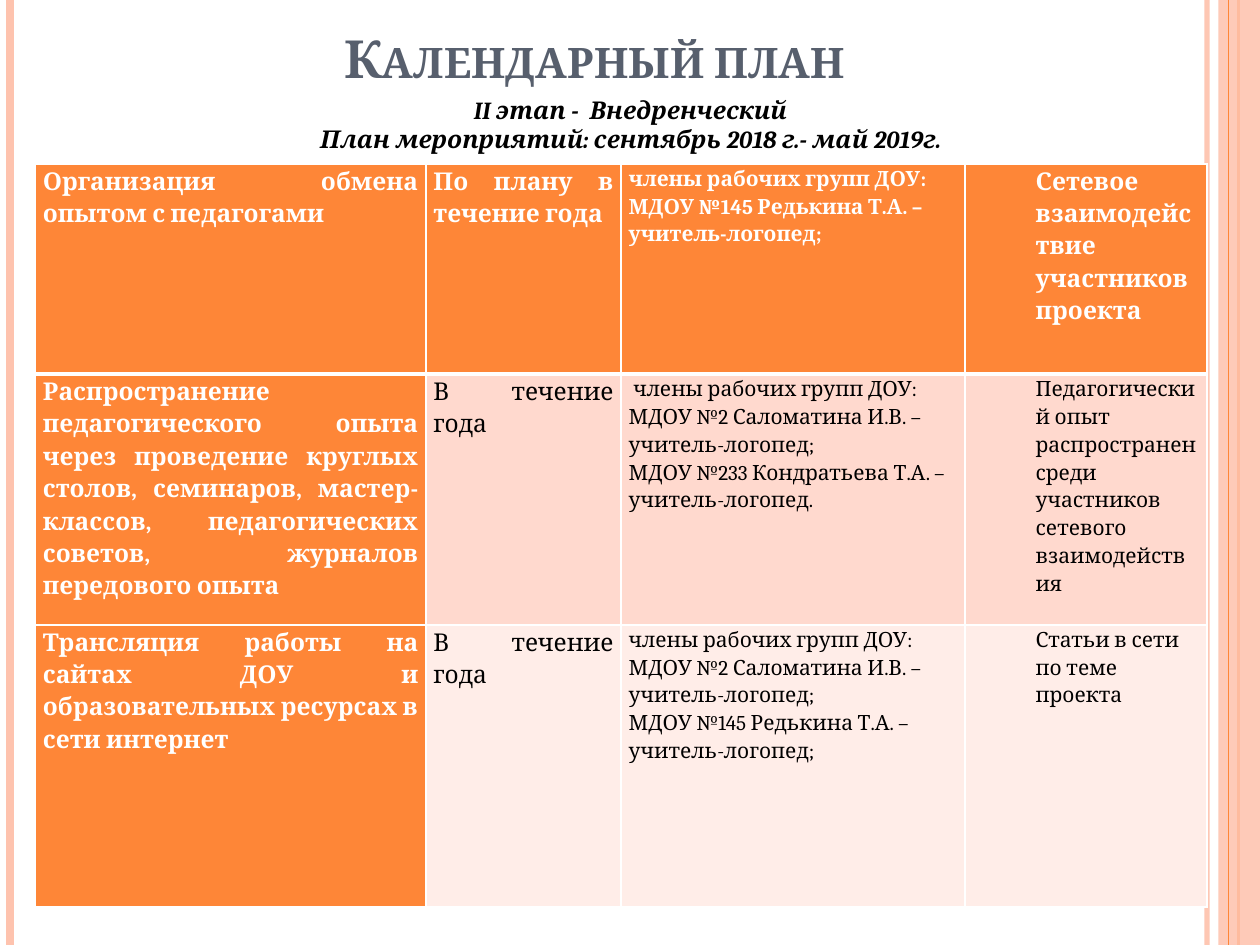
"""Build the calendar plan slide: striped margins, headings and a table of activities."""
from dataclasses import dataclass
from typing import Any, Optional

from lxml.etree import SubElement
from pptx import Presentation
from pptx.dml.color import RGBColor
from pptx.enum.shapes import MSO_CONNECTOR, MSO_SHAPE
from pptx.enum.text import MSO_ANCHOR, PP_ALIGN
from pptx.oxml.ns import qn
from pptx.util import Inches, Pt

ORANGE = RGBColor(0xFE, 0x86, 0x37)
PEACH = RGBColor(0xFE, 0xC3, 0xAE)
BAND_DARK = RGBColor(0xFF, 0xD9, 0xCE)
BAND_LIGHT = RGBColor(0xFF, 0xED, 0xE8)
SLATE = RGBColor(0x57, 0x5F, 0x6D)
WHITE = RGBColor(0xFF, 0xFF, 0xFF)
BLACK = RGBColor(0x00, 0x00, 0x00)

FONT = "Cambria"
SLIDE_WIDTH, SLIDE_HEIGHT = 10, 7.5
COLUMN_WIDTHS = (3.1, 1.55, 2.73, 1.92)
ROW_HEIGHTS = (1.67, 1.99, 2.24)
CELL_FORMAT = {
    "margin_left": Inches(0.06),
    "margin_right": Inches(0.06),
    "margin_top": 0,
    "margin_bottom": 0,
}


@dataclass(frozen=True)
class Stripe:
    x: float
    color: RGBColor
    width: float
    opacity: int = 100


@dataclass(frozen=True)
class Heading:
    left: float
    top: float
    width: float
    height: float
    lines: tuple[str, ...]
    size: float
    color: RGBColor
    italic: bool = False
    wrap: bool = True
    small_caps: bool = False


@dataclass(frozen=True)
class Entry:
    lines: tuple[str, ...]
    size: float = 12
    align: Optional[PP_ALIGN] = None
    indent: float = 0
    space_after: float = 0


@dataclass(frozen=True)
class Activity:
    fill: RGBColor
    entries: tuple[Entry, ...]
    header: bool = False


STRIPES_BEHIND = (
    Stripe(9.58, PEACH, 3, 93),
    Stripe(0.08, PEACH, 4.5),
    Stripe(9.83, ORANGE, 1.5),
)
STRIPE_IN_FRONT = Stripe(9.75, ORANGE, 0.75)

HEADINGS = (
    Heading(0.67, 0.07, 8.17, 0.77, ("Календарный план ",), 30, SLATE, small_caps=True),
    Heading(
        2.32, 0.7, 5.37, 0.57,
        ("II этап -  Внедренческий", "План мероприятий: сентябрь 2018 г.- май 2019г."),
        14, BLACK, italic=True, wrap=False,
    ),
)

MEMBERS = "члены рабочих групп ДОУ:"
SPEECH_2 = "МДОУ №2 Саломатина И.В. – учитель-логопед;"
SPEECH_145 = "МДОУ №145 Редькина Т.А. – учитель-логопед;"
SPEECH_233 = "МДОУ №233 Кондратьева Т.А. – учитель-логопед."


def justified(text: str, space_after: float = 10, indent: float = 0) -> Entry:
    """Return a 14 pt justified entry."""
    return Entry((text,), 14, PP_ALIGN.JUSTIFY, indent, space_after)


ACTIVITIES = (
    Activity(ORANGE, (
        justified("Организация обмена опытом с педагогами"),
        justified("По плану в течение года", 0),
        Entry((MEMBERS, SPEECH_145)),
        justified("Сетевое взаимодействие участников проекта", 0, 0.5),
    ), header=True),
    Activity(BAND_DARK, (
        justified(
            "Распространение педагогического опыта через проведение круглых столов, "
            "семинаров, мастер-классов, педагогических советов, журналов передового опыта", 0
        ),
        justified("В течение года"),
        Entry((" " + MEMBERS, SPEECH_2, SPEECH_233)),
        Entry(("Педагогический опыт распространен среди участников сетевого "
               "взаимодействия",), indent=0.5),
    )),
    Activity(BAND_LIGHT, (
        justified("Трансляция работы на сайтах ДОУ и образовательных ресурсах в сети интернет"),
        justified("В течение года"),
        Entry((MEMBERS, SPEECH_2, SPEECH_145)),
        Entry(("Статьи в сети по теме проекта",), indent=0.5),
    )),
)


def apply_format(target: Any, values: dict[str, Any]) -> None:
    """Set each named attribute on the target."""
    for name, value in values.items():
        setattr(target, name, value)


def set_opacity(properties: Any, percent: int) -> None:
    """Give the first solid colour in the properties an opacity."""
    color = next(properties.iter(qn("a:srgbClr")))
    SubElement(color, qn("a:alpha")).set("val", str(percent * 1000))


def draw_stripe(slide: Any, stripe: Stripe) -> None:
    """Draw a vertical line over the full slide height."""
    x = Inches(stripe.x)
    line = slide.shapes.add_connector(MSO_CONNECTOR.STRAIGHT, x, 0, x, Inches(SLIDE_HEIGHT))
    line.line.color.rgb = stripe.color
    line.line.width = Pt(stripe.width)
    properties = line._element.spPr
    SubElement(properties, qn("a:effectLst"))
    if stripe.opacity < 100:
        set_opacity(properties, stripe.opacity)


def draw_side_band(slide: Any) -> None:
    """Draw the translucent band along the right edge."""
    band = slide.shapes.add_shape(
        MSO_SHAPE.RECTANGLE, Inches(9.67), 0, Inches(0.33), Inches(SLIDE_HEIGHT)
    )
    band.shadow.inherit = False
    band.fill.solid()
    band.fill.fore_color.rgb = PEACH
    band.line.fill.background()
    set_opacity(band._element.spPr, 87)


def write_line(paragraph: Any, text: str, color: RGBColor, font_format: dict[str, Any]) -> Any:
    """Add one formatted run and return it."""
    run = paragraph.add_run()
    run.text = text
    apply_format(run.font, {"name": FONT, **font_format})
    run.font.color.rgb = color
    return run


def draw_heading(slide: Any, heading: Heading) -> None:
    """Draw a centred bold heading."""
    box = slide.shapes.add_textbox(
        *map(Inches, (heading.left, heading.top, heading.width, heading.height))
    )
    frame = box.text_frame
    apply_format(frame, {"word_wrap": heading.wrap, "vertical_anchor": MSO_ANCHOR.MIDDLE})
    font_format = {"size": Pt(heading.size), "bold": True, "italic": heading.italic}
    for index, text in enumerate(heading.lines):
        paragraph = frame.add_paragraph() if index else frame.paragraphs[0]
        paragraph.alignment = PP_ALIGN.CENTER
        run = write_line(paragraph, text, heading.color, font_format)
        if heading.small_caps:
            run.font._element.set("cap", "small")


def draw_borders(cell: Any, row: int) -> None:
    """Draw white cell borders, heavier below the header row."""
    widths = {"L": 1, "R": 1, "T": 3 if row == 1 else 1, "B": 3 if row == 0 else 1}
    properties = cell._tc.get_or_add_tcPr()
    for side, width in widths.items():
        border = SubElement(properties, qn(f"a:ln{side}"), w=str(Pt(width)))
        fill = SubElement(border, qn("a:solidFill"))
        SubElement(fill, qn("a:srgbClr"), val=str(WHITE))


def fill_cell(cell: Any, entry: Entry, fill: RGBColor, accent: bool) -> None:
    """Write one entry into its table cell."""
    apply_format(cell, CELL_FORMAT)
    cell.fill.solid()
    cell.fill.fore_color.rgb = fill
    frame = cell.text_frame
    for index, text in enumerate(entry.lines):
        paragraph = frame.add_paragraph() if index else frame.paragraphs[0]
        apply_format(paragraph, {
            "alignment": entry.align,
            "line_spacing": 1.15,
            "space_after": Pt(entry.space_after),
        })
        if entry.indent:
            paragraph._p.get_or_add_pPr().set("marL", str(Inches(entry.indent)))
        write_line(paragraph, text, WHITE if accent else BLACK,
                   {"size": Pt(entry.size), "bold": accent})


def draw_plan(slide: Any) -> None:
    """Draw the table of activities."""
    plan = slide.shapes.add_table(
        len(ROW_HEIGHTS), len(COLUMN_WIDTHS), Inches(0.28), Inches(1.3),
        Inches(sum(COLUMN_WIDTHS)), Inches(sum(ROW_HEIGHTS)),
    ).table
    for column, width in zip(plan.columns, COLUMN_WIDTHS):
        column.width = Inches(width)
    for row, (activity, height) in enumerate(zip(ACTIVITIES, ROW_HEIGHTS)):
        plan.rows[row].height = Inches(height)
        for column, entry in enumerate(activity.entries):
            cell = plan.cell(row, column)
            accent = activity.header or column == 0
            draw_borders(cell, row)
            fill_cell(cell, entry, ORANGE if accent else activity.fill, accent)


def main() -> None:
    """Assemble and save the slide."""
    presentation = Presentation()
    presentation.slide_width = Inches(SLIDE_WIDTH)
    presentation.slide_height = Inches(SLIDE_HEIGHT)
    slide = presentation.slides.add_slide(presentation.slide_layouts[6])
    for stripe in STRIPES_BEHIND:
        draw_stripe(slide, stripe)
    draw_side_band(slide)
    draw_stripe(slide, STRIPE_IN_FRONT)
    for heading in HEADINGS:
        draw_heading(slide, heading)
    draw_plan(slide)
    presentation.save("out.pptx")


if __name__ == "__main__":
    main()
